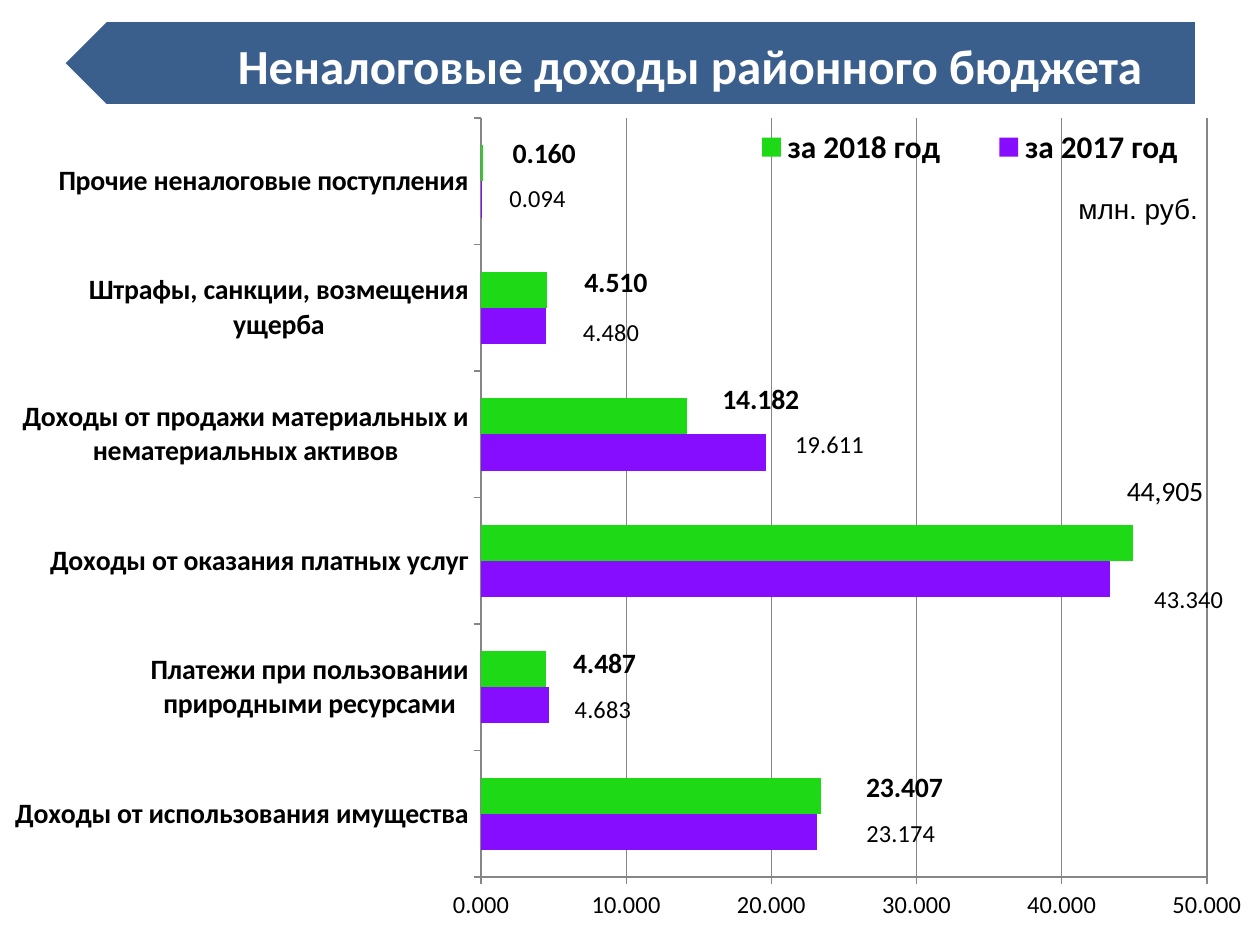
from lxml import etree
from pptx import Presentation
from pptx.chart.data import CategoryChartData
from pptx.dml.color import RGBColor
from pptx.enum.chart import XL_CHART_TYPE, XL_LABEL_POSITION, XL_LEGEND_POSITION, XL_TICK_MARK
from pptx.enum.shapes import MSO_SHAPE
from pptx.enum.text import MSO_ANCHOR, PP_ALIGN
from pptx.oxml.ns import qn
from pptx.util import Inches, Pt

BAR = XL_CHART_TYPE.BAR_CLUSTERED
OUTSIDE_END = XL_LABEL_POSITION.OUTSIDE_END
LEGEND_RIGHT = XL_LEGEND_POSITION.RIGHT
TICK_OUT = XL_TICK_MARK.OUTSIDE
PENTAGON = MSO_SHAPE.PENTAGON
MIDDLE = MSO_ANCHOR.MIDDLE
CENTER = PP_ALIGN.CENTER

COLORS = {
    "banner": "3A5F8C",
    "white": "FFFFFF",
    "black": "000000",
    "grid": "868686",
    "2017": "860DFF",
    "2018": "1ED915",
}
NUMBER_FORMAT = "#,##0.000"
CHART_WIDTH, CHART_HEIGHT = 9.76, 6.54


def style(font, size, color, bold=False, name="Calibri"):
    font.size = Pt(size)
    font.bold = bold
    font.name = name
    font.color.rgb = RGBColor.from_string(COLORS[color])


def make_layout(**values):
    layout = etree.Element(qn("c:layout"))
    manual = etree.SubElement(layout, qn("c:manualLayout"))
    for tag, value in values.items():
        etree.SubElement(manual, qn("c:" + tag)).set("val", str(value))
    return layout


deck = Presentation()
deck.slide_width = Inches(10)
deck.slide_height = Inches(7.5)
page = deck.slides.add_slide(deck.slide_layouts[6])

banner = page.shapes.add_shape(PENTAGON, Inches(0.5), Inches(0.16), Inches(9), Inches(0.68))
banner.rotation = 180
banner.shadow.inherit = False
banner.fill.solid()
banner.fill.fore_color.rgb = RGBColor.from_string(COLORS["banner"])
banner.line.color.rgb = RGBColor.from_string(COLORS["white"])
banner.line.width = Pt(2)

title_box = page.shapes.add_textbox(Inches(0.67), Inches(0.16), Inches(8.83), Inches(0.68))
title_frame = title_box.text_frame
title_frame.word_wrap = True
title_frame.vertical_anchor = MIDDLE
title_frame.margin_left, title_frame.margin_right = Inches(1), Inches(0.22)
title_frame.margin_top, title_frame.margin_bottom = Inches(0.09), 0
title_frame.text = "Неналоговые доходы районного бюджета"
title_para = title_frame.paragraphs[0]
title_para.alignment = CENTER
title_para.line_spacing = 0.9
style(title_para.runs[0].font, 28, "white", True)

data = CategoryChartData(number_format=NUMBER_FORMAT)
data.categories = [
    "Доходы от использования имущества",
    "Платежи при пользовании природными ресурсами",
    "Доходы от оказания платных услуг",
    "Доходы от продажи материальных и нематериальных активов",
    "Штрафы, санкции, возмещения ущерба",
    "Прочие неналоговые поступления",
]
data.add_series("за 2017 год", [23.174, 4.683, 43.34, 19.611, 4.48, 0.094])
data.add_series("за 2018 год", [23.407, 4.487, 44.905, 14.182, 4.51, 0.16])
chart = page.shapes.add_chart(
    BAR, Inches(0.12), Inches(0.84), Inches(CHART_WIDTH), Inches(CHART_HEIGHT), data
).chart
chart.has_title = False
style(chart.font, 10, "black")

plot = chart.plots[0]
plot.gap_width = 150
plot.overlap = 0
plot.vary_by_categories = False
plot_area = chart._chartSpace.chart.plotArea
for old_layout in plot_area.findall(qn("c:layout")):
    plot_area.remove(old_layout)
plot_area.insert(0, make_layout(
    layoutTarget="inner", xMode="edge", yMode="edge", x=0.375, y=0.015, w=0.594, h=0.921))

for axis, size, bold in ((chart.category_axis, 16, True), (chart.value_axis, 14, False)):
    axis.major_tick_mark = TICK_OUT
    axis.format.line.color.rgb = RGBColor.from_string(COLORS["grid"])
    style(axis.tick_labels.font, size, "black", bold)
value_axis = chart.value_axis
value_axis.minimum_scale = 0
value_axis.maximum_scale = 50
value_axis.major_unit = 10
value_axis.tick_labels.number_format = NUMBER_FORMAT
value_axis.tick_labels.number_format_is_linked = False
value_axis.major_gridlines.format.line.color.rgb = RGBColor.from_string(COLORS["grid"])

chart.has_legend = True
legend = chart.legend
legend.position = LEGEND_RIGHT
legend.include_in_layout = False
style(legend.font, 18, "black", True)
for old_layout in legend._element.findall(qn("c:layout")):
    legend._element.remove(old_layout)
legend._element.find(qn("c:legendPos")).addnext(make_layout(
    xMode="edge", yMode="edge", x=0.565, y=0.02, w=0.42, h=0.06))

label_shifts = {
    "2017": [(0.35, 0.02), (0.17, 0.04), (0.31, 0.17), (0.2, -0.06), (0.25, 0.05), (0.18, 0)],
    "2018": [(0.32, -0.06), (0.18, -0.04), (-0.09, -0.4), (0.24, -0.13), (0.26, -0.05), (0.2, -0.07)],
}
label_styles = {"2017": (14, False), "2018": (16, True)}
for series, (year, shifts) in zip(plot.series, label_shifts.items()):
    size, bold = label_styles[year]
    series.format.fill.solid()
    series.format.fill.fore_color.rgb = RGBColor.from_string(COLORS[year])
    series.invert_if_negative = False
    labels = series.data_labels
    labels.show_value = True
    labels.number_format = NUMBER_FORMAT
    labels.number_format_is_linked = False
    labels.position = OUTSIDE_END
    style(labels.font, size, "black", bold)
    for index in range(len(shifts)):
        label = series.points[index].data_label
        if year == "2018" and index == 2:
            label.text_frame.text = "44,905"
            style(label.text_frame.paragraphs[0].runs[0].font, size, "black")
        else:
            style(label.font, size, "black", bold)
        label.position = OUTSIDE_END
    for element, (right, down) in zip(series._element.iter(qn("c:dLbl")), shifts):
        element.find(qn("c:idx")).addnext(make_layout(
            x=round(right / CHART_WIDTH, 3), y=round(down / CHART_HEIGHT, 3)))
        if element.find(qn("c:tx")) is None:
            number_format = etree.Element(qn("c:numFmt"), formatCode=NUMBER_FORMAT, sourceLinked="0")
            element.find(qn("c:layout")).addnext(number_format)
    for leader_lines in series._element.iter(qn("c:showLeaderLines")):
        leader_lines.set("val", "0")

unit_box = page.shapes.add_textbox(Inches(8.46), Inches(1.47), Inches(1.18), Inches(0.37))
unit_box.text_frame.word_wrap = True
unit_box.text_frame.text = "млн. руб."
style(unit_box.text_frame.paragraphs[0].runs[0].font, 16, "black", name="Arial")

deck.save("out.pptx")
